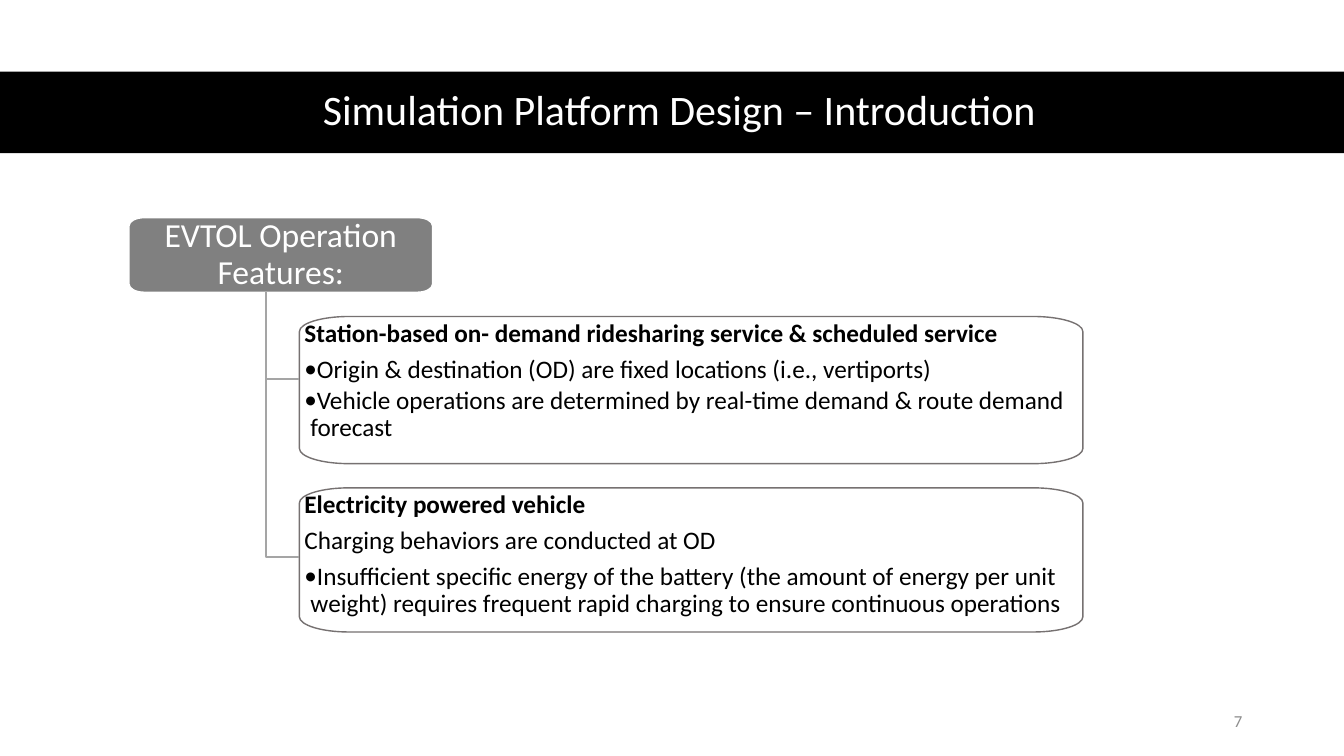
from lxml import etree
from pptx import Presentation
from pptx.dml.color import RGBColor
from pptx.enum.shapes import MSO_CONNECTOR, MSO_SHAPE
from pptx.enum.text import MSO_ANCHOR, PP_ALIGN
from pptx.oxml.ns import qn
from pptx.util import Inches, Pt

ELBOW = MSO_CONNECTOR.ELBOW
RECTANGLE = MSO_SHAPE.RECTANGLE
TOP, MIDDLE = MSO_ANCHOR.TOP, MSO_ANCHOR.MIDDLE
LEFT, CENTER, RIGHT = PP_ALIGN.LEFT, PP_ALIGN.CENTER, PP_ALIGN.RIGHT

FONT = "Calibri"
ARC = 0.55  # handle length of a cubic quarter ellipse
COLORS = {
    "black": "000000",
    "white": "FFFFFF",
    "header": "808080",
    "outline": "767171",
    "connector": "A5A5A5",
    "number": "8C8C8C",
}
HEADING, PLAIN, BULLET = "heading", "plain", "bullet"
FEATURES = [
    ((2.97, 3.14, 7.77, 1.46), [
        (HEADING, "Station-based on- demand ridesharing service & scheduled service"),
        (BULLET, "Origin & destination (OD) are fixed locations (i.e., vertiports)"),
        (BULLET, "Vehicle operations are determined by real-time demand & route demand forecast"),
    ]),
    ((2.97, 4.84, 7.77, 1.43), [
        (HEADING, "Electricity powered vehicle"),
        (PLAIN, "Charging behaviors are conducted at OD"),
        (BULLET, "Insufficient specific energy of the battery (the amount of energy per unit "
                 "weight) requires frequent rapid charging to ensure continuous operations"),
    ]),
]


def color(name):
    return RGBColor.from_string(COLORS[name])


def add_element(parent, tag, **attributes):
    element = etree.SubElement(parent, qn(tag))
    for name, value in attributes.items():
        element.set(name, str(value))
    return element


def set_frame(shape, anchor=MIDDLE, margins=(0.1, 0.05)):
    frame = shape.text_frame
    frame.word_wrap = True
    frame.vertical_anchor = anchor
    frame.margin_left = frame.margin_right = Inches(margins[0])
    frame.margin_top = frame.margin_bottom = Inches(margins[1])
    return frame


def write(paragraph, text, size=18, fill="black", bold=False, align=LEFT,
          spacing=0.9, after=0.0, bullet=False):
    """Fill a paragraph; after is a share of the text size."""
    paragraph.alignment = align
    paragraph.line_spacing = spacing
    paragraph.space_after = Pt(size * after)
    run = paragraph.add_run()
    run.text = text
    run.font.name = FONT
    run.font.size = Pt(size)
    run.font.bold = bold
    run.font.color.rgb = color(fill)
    if bullet:
        paragraph.level = 1
        properties = paragraph._p.get_or_add_pPr()
        properties.set("marL", str(Inches(0.06)))
        properties.set("indent", str(-Inches(0.06)))
        add_element(properties, "a:buFont", typeface=FONT)
        add_element(properties, "a:buChar", char="•")


def add_label(slide, box, text, **style):
    shape = slide.shapes.add_textbox(*map(Inches, box))
    write(set_frame(shape).paragraphs[0], text, **style)


def round_corners(shape):
    """Turn every other segment of an octagon into a quarter ellipse."""
    segments = list(shape._element.iter(qn("a:moveTo"), qn("a:lnTo")))
    points = [(int(point.get("x")), int(point.get("y")))
              for segment in segments for point in segment]
    for index in range(1, 8, 2):
        start, end = points[index - 1], points[index]
        corner = (start[0], end[1]) if index % 4 == 1 else (end[0], start[1])
        handles = [[round(a + ARC * (c - a)) for a, c in zip(point, corner)]
                   for point in (start, end)]
        curve = etree.Element(qn("a:cubicBezTo"))
        for x, y in handles + [end]:
            add_element(curve, "a:pt", x=x, y=y)
        segments[index].getparent().replace(segments[index], curve)


def add_rounded_box(slide, box, radii, fill, line):
    left, top, width, height = box
    radius_x, radius_y = radii
    right, bottom = left + width, top + height
    inner_left, inner_right = left + radius_x, right - radius_x
    inner_top, inner_bottom = top + radius_y, bottom - radius_y
    outline = [(left, inner_top), (inner_left, top), (inner_right, top), (right, inner_top),
               (right, inner_bottom), (inner_right, bottom), (inner_left, bottom),
               (left, inner_bottom)]
    points = [(Inches(x), Inches(y)) for x, y in outline]
    builder = slide.shapes.build_freeform(*points[0])
    builder.add_line_segments(points[1:], close=True)
    shape = builder.convert_to_shape()
    round_corners(shape)
    shape.shadow.inherit = False
    shape.fill.solid()
    shape.fill.fore_color.rgb = color(fill)
    shape.line.color.rgb = color(line)
    shape.line.width = Pt(1)
    return shape


def add_title_band(slide, box):
    left, top, width, height = box
    band = slide.shapes.add_shape(RECTANGLE, *map(Inches, box))
    band.shadow.inherit = False
    band.fill.solid()
    band.fill.fore_color.rgb = color("black")
    band.line.fill.background()
    add_label(slide, (left + 0.61, top, width - 1.07, height),
              "Simulation Platform Design – Introduction",
              size=30, fill="white", align=CENTER)


def add_header(slide, box):
    shape = add_rounded_box(slide, box, (0.15, 0.08), "header", "white")
    frame = set_frame(shape, margins=(0.08, 0.07))
    write(frame.paragraphs[0], "EVTOL Operation Features:",
          size=24, fill="white", align=CENTER, after=0.35)


def add_feature(slide, box, lines):
    shape = add_rounded_box(slide, box, (0.49, 0.15), "white", "outline")
    fill_color = shape._element.spPr.find(qn("a:solidFill"))[0]
    add_element(fill_color, "a:alpha", val=90000)
    frame = set_frame(shape, anchor=TOP, margins=(0.05, 0.04))
    for index, (kind, text) in enumerate(lines):
        paragraph = frame.add_paragraph() if index else frame.paragraphs[0]
        write(paragraph, text, bold=kind == HEADING, bullet=kind == BULLET,
              after=0.15 if kind == BULLET else 0.35)


def add_branch(slide, start, end):
    """Draw an elbow that goes straight down, then across."""
    connector = slide.shapes.add_connector(ELBOW, *map(Inches, start + end))
    connector.line.color.rgb = color("connector")
    connector.line.width = Pt(1.5)
    properties = connector._element.spPr
    add_element(properties, "a:effectLst")
    guides = properties.find(qn("a:prstGeom")).get_or_add_avLst()
    add_element(guides, "a:gd", name="adj1", fmla="val 0")


def add_feature_tree(slide, header_box):
    left, top, width, height = header_box
    add_header(slide, header_box)
    for box, lines in FEATURES:
        add_feature(slide, box, lines)
    trunk = (left + 1.36, top + height)
    for (box, _), branch_y in zip(FEATURES, (3.76, 5.53)):
        add_branch(slide, trunk, (box[0], branch_y))


def main():
    presentation = Presentation()
    presentation.slide_width = Inches(13.33)
    presentation.slide_height = Inches(7.5)
    slide = presentation.slides.add_slide(presentation.slide_layouts[6])
    add_title_band(slide, (0, 0.71, 13.33, 0.81))
    add_feature_tree(slide, (1.28, 2.16, 3.01, 0.74))
    add_label(slide, (9.42, 6.95, 3, 0.4), "7",
              size=12, fill="number", align=RIGHT, spacing=1.0)
    presentation.save("out.pptx")


if __name__ == "__main__":
    main()
